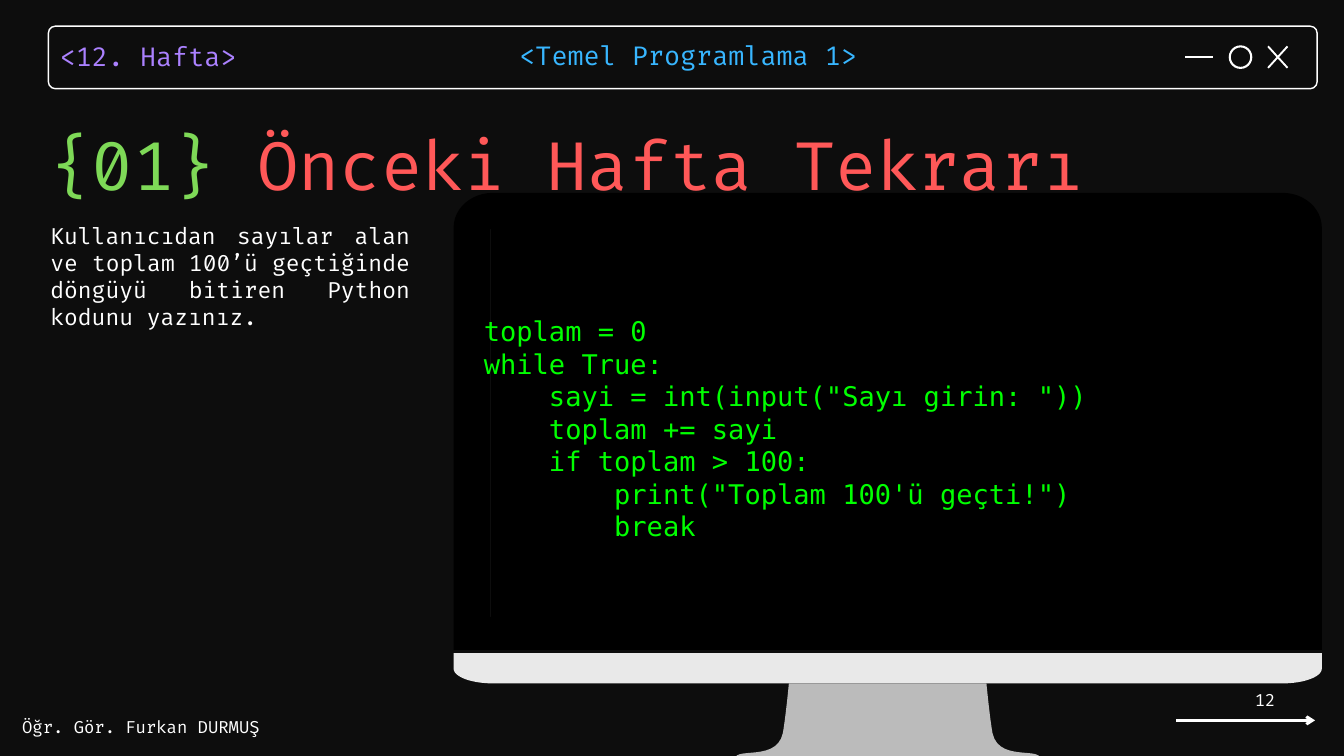
"""Builds a lesson slide with a window bar, a task and a code monitor."""
from lxml import etree
from pptx import Presentation
from pptx import util as u
from pptx.dml.color import RGBColor
from pptx.enum import shapes, text
from pptx.oxml.ns import qn

WHITE, BLACK, GREEN = "FFFFFF", "000000", "00FF00"
CODE = """toplam = 0
while True:
    sayi = int(input("Sayı girin: "))
    toplam += sayi
    if toplam > 100:
        print("Toplam 100'ü geçti!")
        break"""


def rgb(value):
    return RGBColor.from_string(value)


def flatten(nodes, steps=12):
    pts = []
    for node in nodes:
        if len(node) == 2:
            pts.append(node)
            continue
        (x0, y0), (x1, y1, x2, y2, x3, y3) = pts[-1], node
        for i in range(1, steps + 1):
            t = i / steps
            a, b, c, d = (1 - t) ** 3, 3 * t * (1 - t) ** 2, 3 * t * t * (1 - t), t ** 3
            pts.append((a * x0 + b * x1 + c * x2 + d * x3,
                        a * y0 + b * y1 + c * y2 + d * y3))
    return pts


def mirrored(nodes, axis):
    half = flatten(nodes)
    return half + [(2 * axis - x, y) for x, y in reversed(half)]


class Deck:
    font = "Fira Code"

    def __init__(self, width, height, background):
        self.prs = Presentation()
        self.prs.slide_width, self.prs.slide_height = u.Inches(width), u.Inches(height)
        self.s = self.prs.slides.add_slide(self.prs.slide_layouts[6])
        fill = self.s.background.fill
        fill.solid()
        fill.fore_color.rgb = rgb(background)

    def paint(self, sp, fill=None, line=None, weight=1):
        sp.shadow.inherit = False
        if fill:
            sp.fill.solid()
            sp.fill.fore_color.rgb = rgb(fill)
        else:
            sp.fill.background()
        if line:
            sp.line.color.rgb = rgb(line)
            sp.line.width = u.Pt(weight)
        else:
            sp.line.fill.background()
        return sp

    def shape(self, kind, x, y, w, h, **style):
        sp = self.s.shapes.add_shape(kind, *map(u.Inches, (x, y, w, h)))
        return self.paint(sp, **style)

    def outline(self, *contours, **style):
        first, *holes = [[(u.Inches(x), u.Inches(y)) for x, y in c] for c in contours]
        builder = self.s.shapes.build_freeform(*first[0], scale=1.0)
        builder.add_line_segments(first[1:])
        for hole in holes:
            builder.move_to(*hole[0])
            builder.add_line_segments(hole[1:])
        return self.paint(builder.convert_to_shape(), **style)

    def line(self, x1, y1, x2, y2, weight=2, arrow=False):
        cn = self.s.shapes.add_connector(
            shapes.MSO_CONNECTOR.STRAIGHT, *map(u.Inches, (x1, y1, x2, y2)))
        cn.line.color.rgb = rgb(WHITE)
        cn.line.width = u.Pt(weight)
        if arrow:
            etree.SubElement(cn.line._get_or_add_ln(), qn("a:tailEnd"), type="arrow")
        etree.SubElement(cn._element.spPr, qn("a:effectLst"))

    def text(self, x, y, w, h, paragraphs, size=18, color=WHITE, font=None,
             align=None, spacing=None, inset=True):
        """Each paragraph is a string or a list of (text, colour) runs."""
        tf = self.s.shapes.add_textbox(*map(u.Inches, (x, y, w, h))).text_frame
        tf.word_wrap = True
        if inset:
            tf.vertical_anchor = text.MSO_ANCHOR.MIDDLE
        else:
            tf.margin_left = tf.margin_top = tf.margin_right = tf.margin_bottom = 0
            tf.auto_size = text.MSO_AUTO_SIZE.SHAPE_TO_FIT_TEXT
        for i, runs in enumerate(paragraphs):
            p = tf.add_paragraph() if i else tf.paragraphs[0]
            p.alignment = align
            if spacing:
                p.line_spacing = u.Pt(spacing)
            for words, tint in [(runs, color)] if isinstance(runs, str) else runs:
                r = p.add_run()
                r.text = words
                r.font.size = u.Pt(size)
                r.font.name = font or self.font
                r.font.color.rgb = rgb(tint)


def window_bar(deck):
    kind = shapes.MSO_SHAPE
    deck.text(0.89, 0.52, 3.4, 0.53, ["<12. Hafta>"], size=28, color="AB81FF",
              spacing=39.2, inset=False)
    bar = deck.shape(kind.ROUNDED_RECTANGLE, 0.72, 0.39, 18.88, 0.93,
                     line=WHITE, weight=1.5)
    bar.adjustments[0] = 0.11
    deck.line(18.87, 0.69, 19.16, 1.01)
    deck.line(19.16, 0.69, 18.87, 1.01)
    deck.line(17.64, 0.85, 18.05, 0.85)
    deck.shape(kind.OVAL, 18.3, 0.69, 0.32, 0.32, line=WHITE, weight=2.25)
    deck.text(7.73, 0.51, 5.29, 0.53, ["<Temel Programlama 1>"], size=28,
              color="38B6FF", spacing=39.2, inset=False)


def monitor(deck):
    left, right, axis = 6.75, 19.67, 13.21
    bezel = mirrored([(left, 9.67), (left, 3.39), (left, 3.1, 7.01, 2.87, 7.34, 2.87)], axis)
    opening = [(7.29, 3.41), (19.1, 3.41), (19.1, 9.18), (7.29, 9.18)]
    chin = mirrored([(left, 9.72), (left, 9.95), (left, 10.07, 7.01, 10.17, 7.34, 10.17)], axis)
    stand = mirrored([(11.74, 10.17), (11.74, 10.17, 11.69, 10.69, 11.65, 10.91),
                      (11.57, 11.28, 11.1, 11.16, 10.97, 11.24),
                      (10.95, 11.25, 10.96, 11.27, 10.98, 11.27)], axis)
    deck.outline(bezel, opening, fill=BLACK)
    deck.outline(chin, fill="E9E9E9")
    deck.outline(stand, fill="BBBBBB")
    deck.shape(shapes.MSO_SHAPE.RECTANGLE, 7.32, 3.17, 11.87, 6.1,
               fill=BLACK, line=BLACK, weight=2)
    deck.text(7.2, 4.68, right - 7.2, 3.42, CODE.split("\n"), size=29, color=GREEN,
              font="DejaVu Sans Mono", inset=False)


def main():
    deck = Deck(20, 11.25, "0D0D0D")
    window_bar(deck)
    deck.line(17.5, 10.72, 19.57, 10.72, weight=3, arrow=True)
    deck.text(0.33, 10.67, 3.67, 0.3, ["Öğr. Gör. Furkan DURMUŞ"], inset=False)
    deck.text(0.75, 3.31, 5.35, 1.62,
              ["Kullanıcıdan sayılar alan ve toplam 100’ü geçtiğinde "
               "döngüyü bitiren Python kodunu yazınız."],
              size=24, align=text.PP_ALIGN.JUSTIFY, inset=False)
    deck.text(16.75, 10.21, 2.33, 0.4, ["12"], align=text.PP_ALIGN.RIGHT)
    deck.text(0.75, 1.61, 19.25, 1.41,
              [[("{01} ", "7ED957"), ("Önceki Hafta Tekrarı", "FF5858")]],
              size=72, spacing=102.6, inset=False)
    monitor(deck)
    deck.prs.save("out.pptx")


if __name__ == "__main__":
    main()
